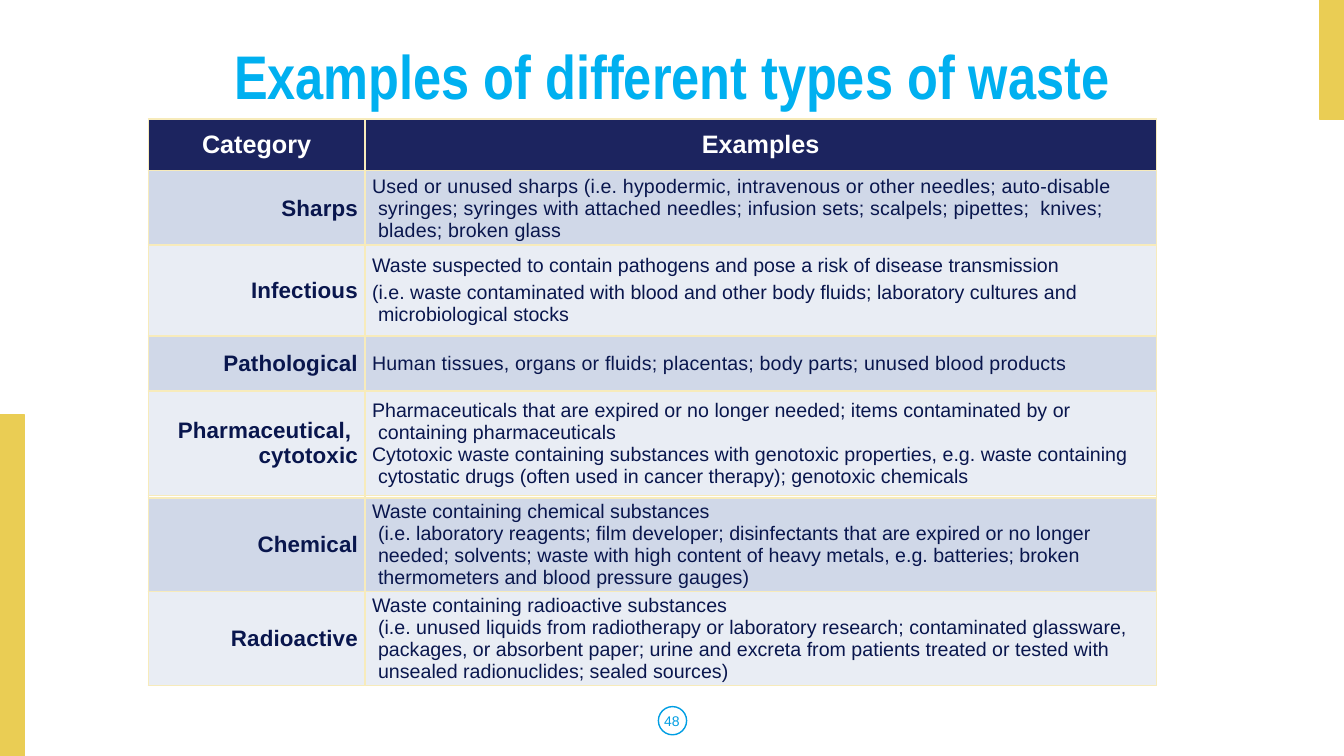
"""Builds a slide with a stacked table of waste categories and their examples."""
import pptx
import pptx.dml.color
import pptx.enum.shapes
import pptx.enum.text
import pptx.oxml
import pptx.oxml.ns
import pptx.util

RGBColor = pptx.dml.color.RGBColor
ALIGN = pptx.enum.text.PP_ALIGN
MIDDLE = pptx.enum.text.MSO_ANCHOR.MIDDLE
SHAPE = pptx.enum.shapes.MSO_SHAPE
Pt = pptx.util.Pt
SCALE = 9144

GOLD = RGBColor(0xEA, 0xCD, 0x54)
SKY = RGBColor(0x00, 0xB0, 0xF0)
BLUE = RGBColor(0x00, 0x9E, 0xE3)
WHITE = RGBColor(0xFF, 0xFF, 0xFF)
NAVY = RGBColor(0x1C, 0x24, 0x5F)
INK = RGBColor(0x09, 0x16, 0x4D)
BANDS = [RGBColor(0xD0, 0xD8, 0xE8), RGBColor(0xE9, 0xED, 0xF4)]
CREAM = RGBColor(0xF7, 0xEB, 0xBB)


def style_runs(para, size, color, bold=False, font="Arial", spacing=0):
    for span in para.runs:
        span.font.size = Pt(size)
        span.font.name = font
        span.font.bold = bold
        span.font.color.rgb = color
        if spacing:
            span.font._element.set("spc", str(spacing))


def add_row(page, top, height, fill, margins):
    frame = page.shapes.add_table(1, 2, 147 * SCALE, top * SCALE, 1000 * SCALE, height * SCALE)
    table = frame.table
    table.first_row = table.horz_banding = False
    table.columns[0].width = 215 * SCALE
    table.columns[1].width = 785 * SCALE
    for cell in table.rows[0].cells:
        cell.vertical_anchor = MIDDLE
        cell.margin_left = cell.margin_right = margins[0] * SCALE
        cell.margin_top = cell.margin_bottom = margins[1] * SCALE
        for side in ("lnL", "lnR", "lnT", "lnB"):
            cell._tc.get_or_add_tcPr().append(pptx.oxml.parse_xml(
                f'<a:{side} {pptx.oxml.ns.nsdecls("a")} w="12700"><a:solidFill>'
                f'<a:srgbClr val="{CREAM}"/></a:solidFill></a:{side}>'))
        cell.fill.solid()
        cell.fill.fore_color.rgb = fill
    return table.rows[0].cells


ROWS = [
    (169, 77, "Sharps", 10, 3.6, [
        "Used or unused sharps (i.e. hypodermic, intravenous or other needles; auto-disable "
        "syringes; syringes with attached needles; infusion sets; scalpels; pipettes;  knives; "
        "blades; broken glass"]),
    (243, 90, "Infectious", 0, 3.6, [
        "Waste suspected to contain pathogens and pose a risk of disease transmission",
        "(i.e. waste contaminated with blood and other body fluids; laboratory cultures and "
        "microbiological stocks"]),
    (334, 53, "Pathological", 10, 3.6, [
        "Human tissues, organs or fluids; placentas; body parts; unused blood products"]),
    (388, 104, "Pharmaceutical, \vcytotoxic", 0, 0, [
        "Pharmaceuticals that are expired or no longer needed; items contaminated by or "
        "containing pharmaceuticals",
        "Cytotoxic waste containing substances with genotoxic properties, e.g. waste containing "
        "cytostatic drugs (often used in cancer therapy); genotoxic chemicals"]),
    (494, 93, "Chemical", 0, 3.6, [
        "Waste containing chemical substances \v(i.e. laboratory reagents; film developer; "
        "disinfectants that are expired or no longer needed; solvents; waste with high content "
        "of heavy metals, e.g. batteries; broken thermometers and blood pressure gauges)"]),
    (587, 93, "Radioactive", 0, 3.6, [
        "Waste containing radioactive substances \v(i.e. unused liquids from radiotherapy or "
        "laboratory research; contaminated glassware, packages, or absorbent paper; urine and "
        "excreta from patients treated or tested with unsealed radionuclides; sealed sources)"]),
]

deck = pptx.Presentation()
deck.slide_width = 1333 * SCALE
deck.slide_height = 750 * SCALE
page = deck.slides.add_slide(deck.slide_layouts[5])

for kind, left, top, width, height, color in [
    (SHAPE.RECTANGLE, 0, 411, 24, 339, GOLD),
    (SHAPE.RECTANGLE, 1309, 0, 24, 118, GOLD),
    (SHAPE.OVAL, 653, 701, 28, 28, BLUE),
]:
    accent = page.shapes.add_shape(kind, left * SCALE, top * SCALE, width * SCALE, height * SCALE)
    accent.shadow.inherit = False
    accent.line.color.rgb = color
    accent.line.width = Pt(1)
    if kind == SHAPE.RECTANGLE:
        accent.fill.solid()
        accent.fill.fore_color.rgb = color
    else:
        accent.fill.background()

title = page.shapes.title
title.left, title.top, title.width, title.height = [n * SCALE for n in (92, 40, 1150, 78)]
title.text_frame.text = "Examples of different types of waste"
title.text_frame.vertical_anchor = MIDDLE
title.text_frame.auto_size = pptx.enum.text.MSO_AUTO_SIZE.NONE
heading = title.text_frame.paragraphs[0]
heading.alignment = ALIGN.CENTER
heading.line_spacing = 0.9
style_runs(heading, 44, SKY, True, "Arial Narrow")

for cell, label in zip(add_row(page, 118, 51, NAVY, (10, 5)), ("Category", "Examples")):
    cell.text_frame.text = label
    para = cell.text_frame.paragraphs[0]
    para.alignment = ALIGN.CENTER
    style_runs(para, 18, WHITE, True)

for index, (top, height, category, spacing, gap, examples) in enumerate(ROWS):
    name_cell, example_cell = add_row(page, top, height, BANDS[index % 2], (7, 0))
    para = name_cell.text_frame.paragraphs[0]
    para.text = category
    para.alignment = ALIGN.RIGHT
    para.space_after = Pt(3.6)
    style_runs(para, 16, INK, True, spacing=10)
    for number, example in enumerate(examples):
        frame = example_cell.text_frame
        para = frame.add_paragraph() if number else frame.paragraphs[0]
        para.text = example
        para.alignment = ALIGN.LEFT
        para.space_after = Pt(3.6 if number else gap)
        properties = para._p.get_or_add_pPr()
        properties.set("marL", str(6 * SCALE))
        properties.set("indent", str(-11 * SCALE))
        style_runs(para, 14, INK, spacing=spacing)

box = page.shapes.add_textbox(0, 695 * SCALE, 1333 * SCALE, 40 * SCALE)
box.text_frame.word_wrap = True
box.text_frame.vertical_anchor = MIDDLE
box.text_frame.text = "48"
page_number = box.text_frame.paragraphs[0]
page_number.alignment = ALIGN.CENTER
style_runs(page_number, 10, BLUE)

deck.save("out.pptx")
